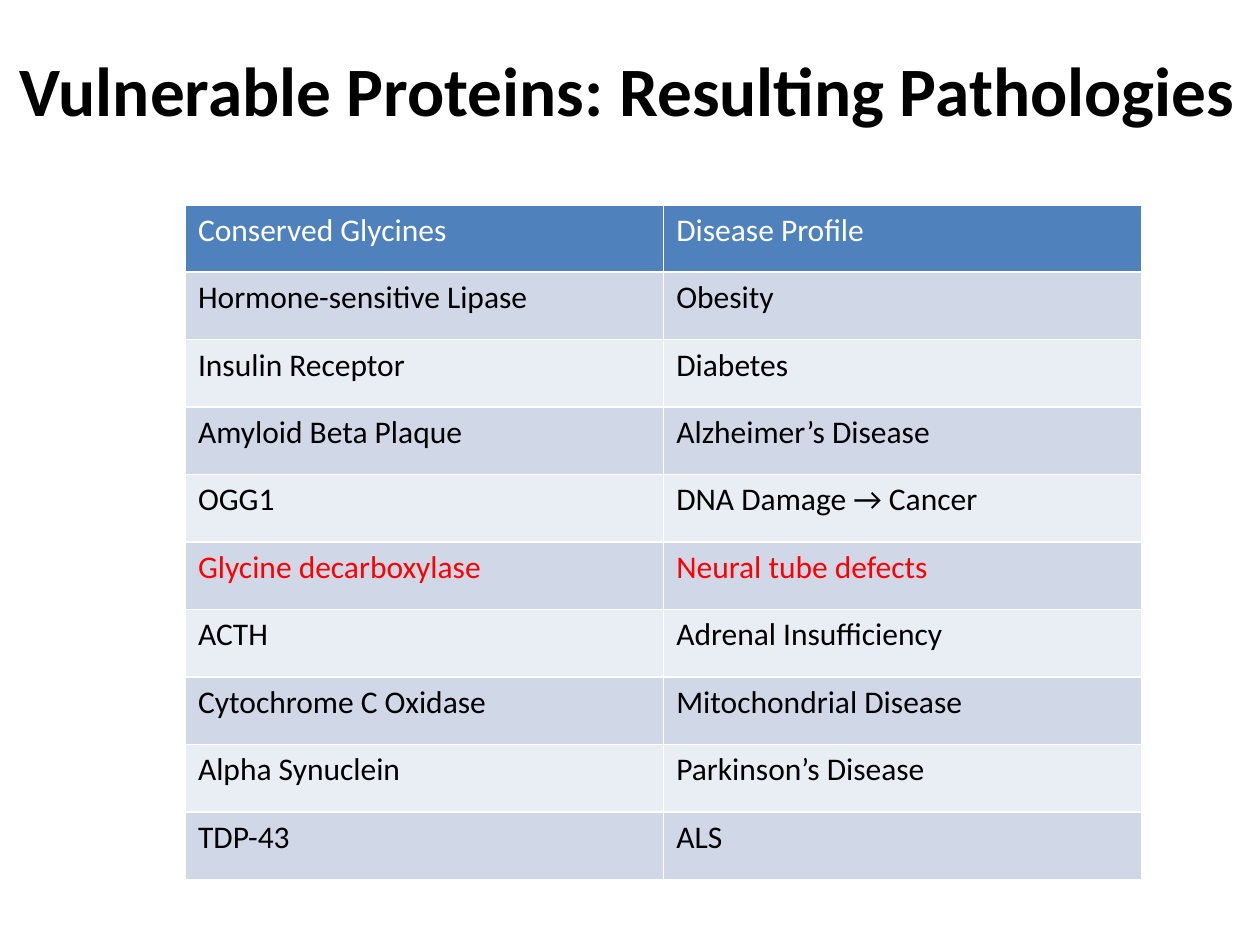
from pptx import Presentation
from pptx.dml.color import RGBColor
from pptx.enum.text import MSO_ANCHOR, PP_ALIGN
from pptx.util import Pt

COLORS = {
    "text": "000000",
    "header_text": "FFFFFF",
    "highlight": "FF0000",
    "header": "4F81BD",
    "band_dark": "D0D8E8",
    "band_light": "E9EDF4",
}
FONT = "Calibri"
ROWS = [
    ("Conserved Glycines", "Disease Profile"),
    ("Hormone-sensitive Lipase", "Obesity"),
    ("Insulin Receptor", "Diabetes"),
    ("Amyloid Beta Plaque", "Alzheimer’s Disease"),
    ("OGG1", "DNA Damage → Cancer"),
    ("Glycine decarboxylase", "Neural tube defects"),
    ("ACTH", "Adrenal Insufficiency"),
    ("Cytochrome C Oxidase", "Mitochondrial Disease"),
    ("Alpha Synuclein", "Parkinson’s Disease"),
    ("TDP-43", "ALS"),
]
HIGHLIGHT_ROW = 5


def rgb(name):
    return RGBColor.from_string(COLORS[name])


def write(p, text, size, color, bold=False):
    r = p.add_run()
    r.text = text
    for name, value in {"name": FONT, "size": Pt(size), "bold": bold}.items():
        setattr(r.font, name, value)
    r.font.color.rgb = rgb(color)


def add_title(s, text, left, top, width, height):
    tf = s.shapes.add_textbox(Pt(left), Pt(top), Pt(width), Pt(height)).text_frame
    tf.word_wrap = True
    tf.vertical_anchor = MSO_ANCHOR.MIDDLE
    p = tf.paragraphs[0]
    p.alignment = PP_ALIGN.CENTER
    write(p, text, 39.6, "text", bold=True)


def row_colors(i):
    """Return the fill and text colour names of table row i."""
    if i == 0:
        return "header", "header_text"
    fill = "band_dark" if i % 2 else "band_light"
    return fill, "highlight" if i == HIGHLIGHT_ROW else "text"


def add_disease_table(s, rows, left, top, width, height):
    """The default table style supplies the white cell borders."""
    table = s.shapes.add_table(
        len(rows), len(rows[0]), Pt(left), Pt(top), Pt(width), Pt(height)
    ).table
    for i, texts in enumerate(rows):
        fill, color = row_colors(i)
        for cell, text in zip(table.rows[i].cells, texts):
            cell.fill.solid()
            cell.fill.fore_color.rgb = rgb(fill)
            write(cell.text_frame.paragraphs[0], text, 18, color)


def main():
    prs = Presentation()
    prs.slide_width, prs.slide_height = Pt(720), Pt(540)
    s = prs.slides.add_slide(prs.slide_layouts[6])
    add_title(s, "Vulnerable Proteins: Resulting Pathologies", -10.8, 5.8, 738.7, 90)
    add_disease_table(s, ROWS, 106, 117, 546.6, 385.6)
    prs.save("out.pptx")


if __name__ == "__main__":
    main()
